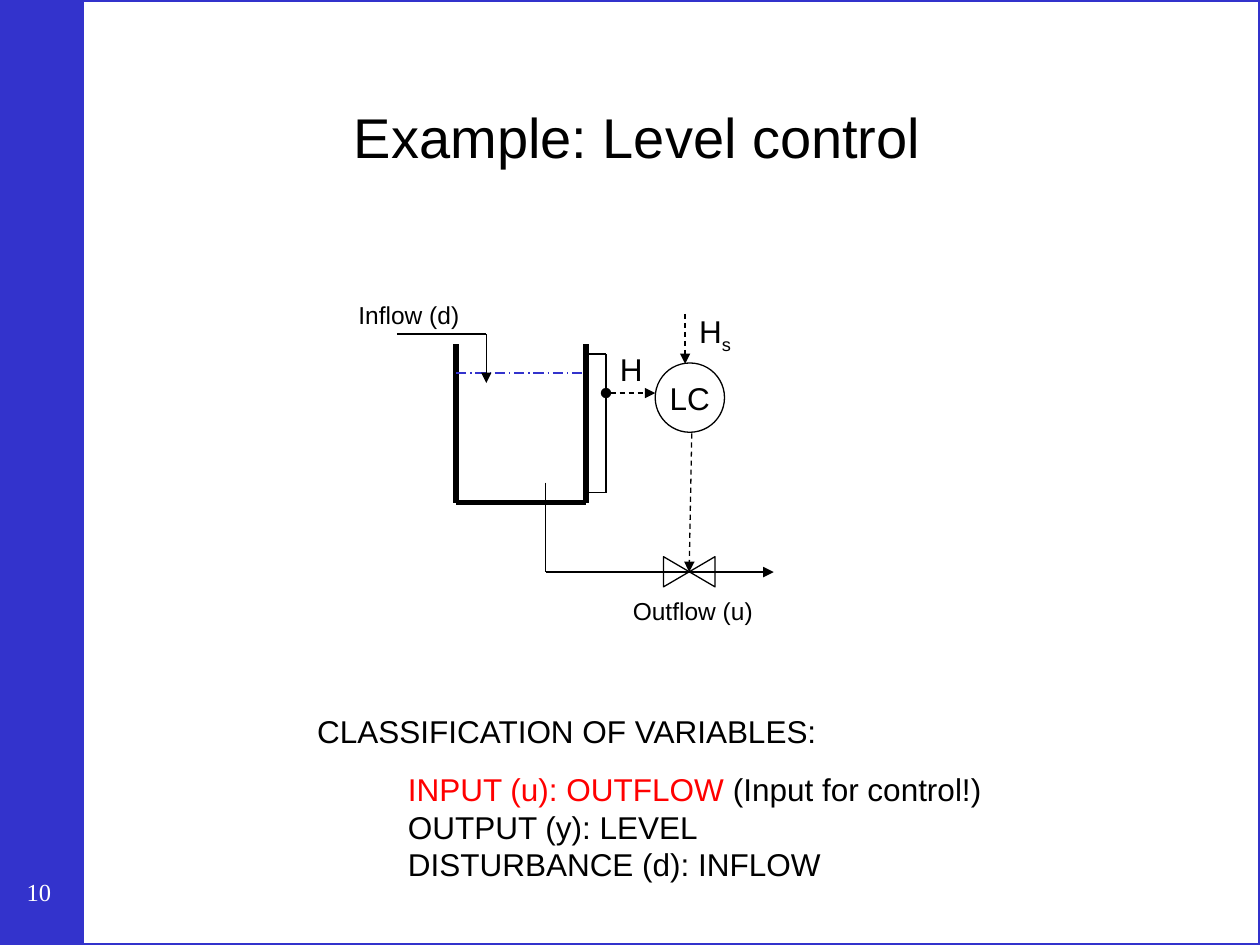
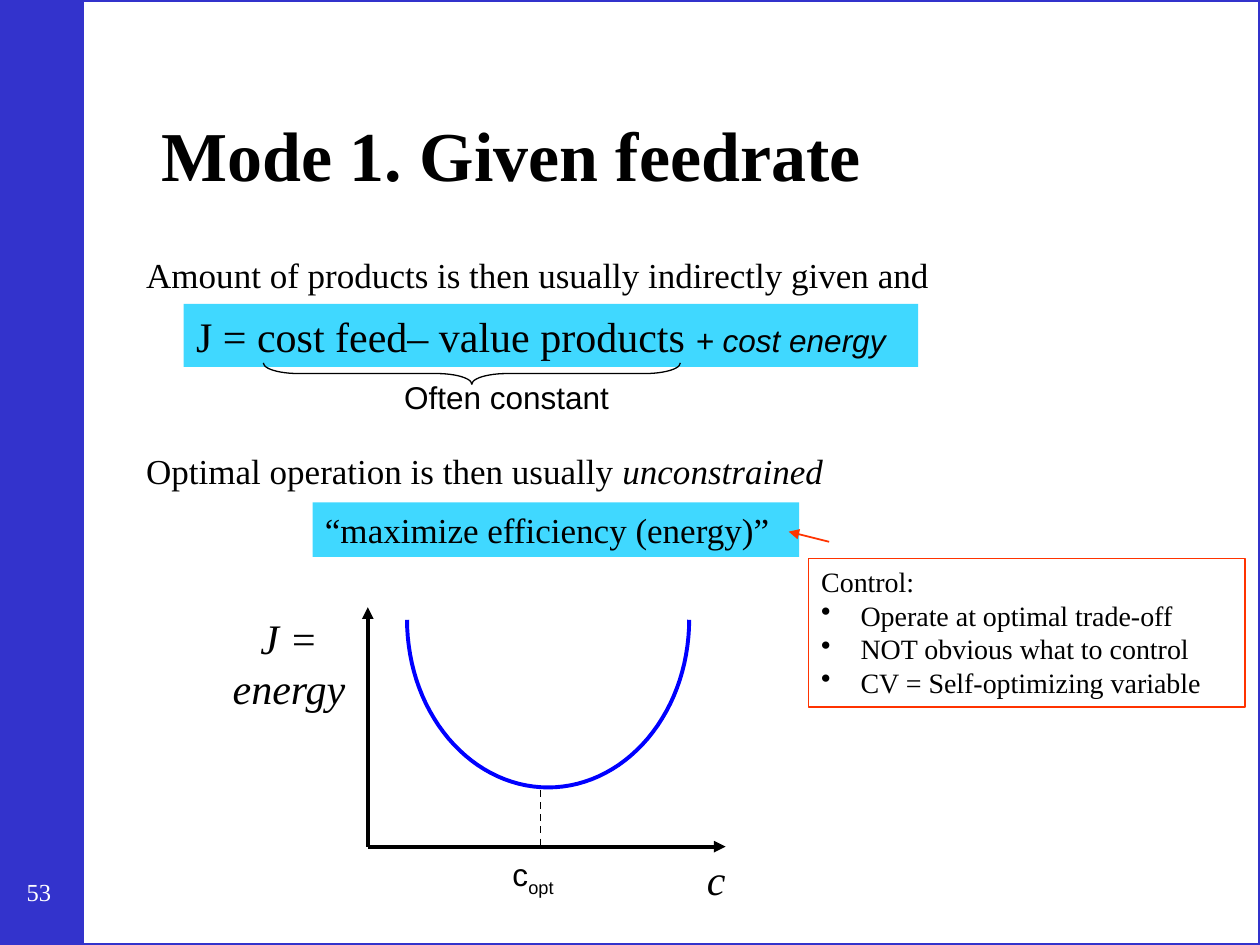
import math
from dataclasses import dataclass

from lxml import etree
from pptx import Presentation
from pptx.dml.color import RGBColor
from pptx.enum.dml import MSO_LINE
from pptx.enum.shapes import MSO_CONNECTOR, MSO_SHAPE
from pptx.enum.text import MSO_ANCHOR, MSO_AUTO_SIZE, PP_ALIGN
from pptx.oxml.ns import qn
from pptx.util import Pt

LEFT, MID = PP_ALIGN.LEFT, PP_ALIGN.CENTER
DASH, CHAIN = MSO_LINE.DASH, MSO_LINE.LONG_DASH_DOT
RECT, OVAL = MSO_SHAPE.RECTANGLE, MSO_SHAPE.OVAL
VALVE, BRACE = MSO_SHAPE.FLOWCHART_COLLATE, MSO_SHAPE.LEFT_BRACE
SANS, SERIF = "Arial", "Times New Roman"
HUES = {
    "black": "000000", "white": "FFFFFF", "band": "3333CC", "red": "FF0000",
    "note": "FF3300", "cyan": "00CCFF", "curve": "0000FF",
}
WIDE, HIGH = 720, 540


@dataclass
class Run:
    text: str
    hue: str = ""
    font: str = ""
    size: float = 0
    slant: bool = False
    sub: bool = False


@dataclass
class Para:
    runs: list[Run]
    size: float
    font: str = SANS
    hue: str = "black"
    align: PP_ALIGN = LEFT
    bold: bool = False
    slant: bool = False
    bullet: str = ""
    gap: float = 0


@dataclass
class Box:
    x: float
    y: float
    w: float
    h: float
    paras: list[Para]
    wrap: bool = False
    fill: str = ""
    edge: str = ""


@dataclass
class Line:
    x1: float
    y1: float
    x2: float
    y2: float
    width: float = 0.75
    hue: str = "black"
    dash: MSO_LINE | None = None
    head: str = ""
    tail: str = ""


@dataclass
class Form:
    kind: MSO_SHAPE
    x: float
    y: float
    w: float
    h: float
    fill: str = ""
    edge: str = ""
    width: float = 0.75
    turn: float = 0


def rgb(hue: str) -> RGBColor:
    return RGBColor.from_string(HUES[hue])


def plain(text: str, size: float, font: str = SANS, **style) -> Para:
    return Para([Run(text)], size, font, **style)


def paint(shape, fill: str, edge: str, width: float = 0.75) -> None:
    if fill:
        shape.fill.solid()
        shape.fill.fore_color.rgb = rgb(fill)
    else:
        shape.fill.background()
    if edge:
        shape.line.color.rgb = rgb(edge)
        shape.line.width = Pt(width)
    else:
        shape.line.fill.background()


def write(frame, paras: list[Para], wrap: bool = True) -> None:
    frame.word_wrap = wrap
    frame.auto_size = MSO_AUTO_SIZE.NONE
    for i, para in enumerate(paras):
        item = frame.paragraphs[0] if i == 0 else frame.add_paragraph()
        item.alignment = para.align
        item.space_before = Pt(para.gap)
        props = item._p.get_or_add_pPr()
        inset = Pt(22.5) if para.bullet else 0
        props.set("marL", str(inset))
        props.set("indent", str(-inset))
        if para.bullet:
            etree.SubElement(props, qn("a:buChar")).set("char", para.bullet)
        else:
            etree.SubElement(props, qn("a:buNone"))
        font = item.font
        font.name, font.size = para.font, Pt(para.size)
        font.bold, font.italic = para.bold, para.slant
        font.color.rgb = rgb(para.hue)
        for run in para.runs:
            part = item.add_run()
            part.text = run.text
            if run.hue:
                part.font.color.rgb = rgb(run.hue)
            if run.font:
                part.font.name = run.font
            if run.size:
                part.font.size = Pt(run.size)
            if run.slant:
                part.font.italic = True
            if run.sub:
                part.font._element.set("baseline", "-25000")


def put_box(slide, box: Box) -> None:
    shape = slide.shapes.add_textbox(Pt(box.x), Pt(box.y), Pt(box.w), Pt(box.h))
    paint(shape, box.fill, box.edge)
    if box.fill:
        tint = shape._element.spPr.find(".//" + qn("a:srgbClr"))
        etree.SubElement(tint, qn("a:alpha")).set("val", "75000")
    write(shape.text_frame, box.paras, box.wrap)


def put_line(slide, line: Line) -> None:
    shape = slide.shapes.add_connector(
        MSO_CONNECTOR.STRAIGHT, Pt(line.x1), Pt(line.y1), Pt(line.x2), Pt(line.y2))
    shape.line.color.rgb = rgb(line.hue)
    shape.line.width = Pt(line.width)
    if line.dash:
        shape.line.dash_style = line.dash
    props = shape._element.spPr
    for tag, kind in (("a:headEnd", line.head), ("a:tailEnd", line.tail)):
        if kind:
            etree.SubElement(props.find(qn("a:ln")), qn(tag)).set("type", kind)
    etree.SubElement(props, qn("a:effectLst"))


def put_form(slide, form: Form):
    shape = slide.shapes.add_shape(
        form.kind, Pt(form.x), Pt(form.y), Pt(form.w), Pt(form.h))
    shape.shadow.inherit = False
    shape.rotation = form.turn
    paint(shape, form.fill, form.edge, form.width)
    return shape


def place(shape, box: Box) -> None:
    shape.left, shape.top = Pt(box.x), Pt(box.y)
    shape.width, shape.height = Pt(box.w), Pt(box.h)
    write(shape.text_frame, box.paras, box.wrap)


def start(deck, layout: int, page: str, title: Box):
    slide = deck.slides.add_slide(deck.slide_layouts[layout])
    put_form(slide, Form(RECT, 0, 0, 48, HIGH, fill="band"))
    put_form(slide, Form(RECT, 0, 0, WIDE, HIGH, edge="band", width=2.25))
    put_box(slide, Box(5.8, 497.5, 33, 30,
                       [plain(page, 14, SERIF, hue="white", align=MID)]))
    place(slide.shapes.title, title)
    slide.shapes.title.text_frame.vertical_anchor = MSO_ANCHOR.MIDDLE
    return slide


def level(deck) -> None:
    slide = start(deck, 5, "10", Box(
        193.7, 54.7, 341.3, 46, [plain("Example: Level control", 32, align=MID)]))
    west, east, top, base = 260.6, 334.8, 196.6, 287.3
    gauge, high, low = 346.3, 202.3, 281.5
    feed, drop = 190.8, 277.9
    pipe, out = 311.8, 326.9
    for line in (
        Line(west, top, west, base, 3),
        Line(west, base, east, base, 3),
        Line(east, top, east, base, 3),
        Line(west, 213.1, east, 213.1, hue="band", dash=CHAIN),
        Line(east, high, gauge, high),
        Line(gauge, high, gauge, low),
        Line(east, low, gauge, low),
        Line(gauge, 224.6, 374.4, 224.6, dash=DASH, head="oval", tail="triangle"),
        Line(391.5, 179.3, 391.5, 208, dash=DASH, tail="triangle"),
        Line(226.8, feed, drop, feed),
        Line(drop, feed, drop, 218.9, tail="triangle"),
        Line(pipe, 275.8, pipe, out),
        Line(pipe, out, 442.1, out, tail="triangle"),
        Line(395.3, 247.7, 393.8, out, dash=DASH, tail="triangle"),
    ):
        put_line(slide, line)
    ring = put_form(slide, Form(OVAL, 374.4, 207.4, 39.6, 39.6, "white", "black"))
    write(ring.text_frame, [plain("LC", 18, align=MID)], False)
    ring.text_frame.vertical_anchor = MSO_ANCHOR.MIDDLE
    put_form(slide, Form(VALVE, 385.2, 312, 17.3, 29.5, edge="black", turn=90))
    for box in (
        Box(347, 196.6, 27.4, 29, [plain("H", 18, align=MID)]),
        Box(391.7, 175, 33.8, 29,
            [Para([Run("H"), Run("s", sub=True)], 18, align=MID)]),
        Box(197.3, 167.8, 72.7, 24.5, [plain("Inflow (d)", 14, align=MID)]),
        Box(354.2, 337, 83.5, 24.5, [plain("Outflow (u)", 14, align=MID)]),
        Box(172.8, 403.2, 302.4, 51,
            [plain("CLASSIFICATION OF VARIABLES:", 18, align=MID)]),
        Box(226, 436.3, 356.4, 72.7, [
            Para([Run("INPUT (u): OUTFLOW ", hue="red"),
                  Run("(Input for control!)")], 18),
            plain("OUTPUT (y): LEVEL", 18),
            plain("DISTURBANCE (d): INFLOW", 18)]),
    ):
        put_box(slide, box)


def mode(deck) -> None:
    slide = start(deck, 1, "53", Box(
        85, 42.5, 612, 90,
        [plain("Mode 1. Given feedrate", 40, SERIF, bold=True)], True))
    place(slide.placeholders[1], Box(76.3, 141, 612, 373.7, [
        plain("Amount of products is then usually indirectly given and", 20, SERIF),
        Para([Run("Optimal operation is then usually "),
              Run("unconstrained", slant=True)], 20, SERIF, gap=88.5)], True))
    notes = ("Operate at optimal trade-off", "NOT obvious what to control",
             "CV = Self-optimizing variable")
    for box in (
        Box(178.6, 287, 278, 31.2,
            [plain("“maximize efficiency (energy)”", 20, SERIF)], True, "cyan"),
        Box(462.2, 319, 249.2, 85,
            [plain("Control:", 16, SERIF)]
            + [plain(note, 16, SERIF, bullet="•") for note in notes],
            True, edge="note"),
        Box(105, 173.7, 419.7, 36,
            [Para([Run("J = cost feed– value products "),
                   Run("+ cost energy", font=SANS, size=18, slant=True)],
                  24, SERIF)], True, "cyan"),
        Box(393, 484, 32.4, 36, [plain("c", 24, SERIF, align=MID, slant=True)]),
        Box(112.3, 346.3, 105.8, 64.8,
            [plain("J = energy", 24, SERIF, align=MID, slant=True)], True),
        Box(285.8, 485.3, 40.3, 29, [Para([Run("c"), Run("opt", sub=True)], 18)]),
        Box(223.9, 212.4, 132.5, 29, [plain("Often constant", 18)]),
    ):
        put_box(slide, box)
    brace = put_form(slide, Form(BRACE, 263.5, 94.3, 12.2, 238.3,
                                 edge="black", turn=270))
    brace.adjustments[0] = 1.65
    left, floor = 210.2, 483.8
    for line in (
        Line(473.8, 309.6, 450.7, 303.8, 1, "note", tail="triangle"),
        Line(left, floor, left, 347, 2.25, tail="triangle"),
        Line(left, floor, 414.7, floor, 2.25, tail="triangle"),
        Line(308.9, 451.4, 308.9, 485.3, 1, dash=DASH),
    ):
        put_line(slide, line)
    steps = 60
    arc = [(313.2 - 80.6 * math.cos(math.pi * i / steps),
            354.2 + 95.8 * math.sin(math.pi * i / steps))
           for i in range(steps + 1)]
    dots = [(Pt(x), Pt(y)) for x, y in arc]
    pen = slide.shapes.build_freeform(*dots[0])
    pen.add_line_segments(dots[1:], close=False)
    curve = pen.convert_to_shape()
    curve.shadow.inherit = False
    paint(curve, "", "curve", 2.25)


def main() -> None:
    deck = Presentation()
    deck.slide_width, deck.slide_height = Pt(WIDE), Pt(HIGH)
    level(deck)
    mode(deck)
    deck.save("out.pptx")


if __name__ == "__main__":
    main()
